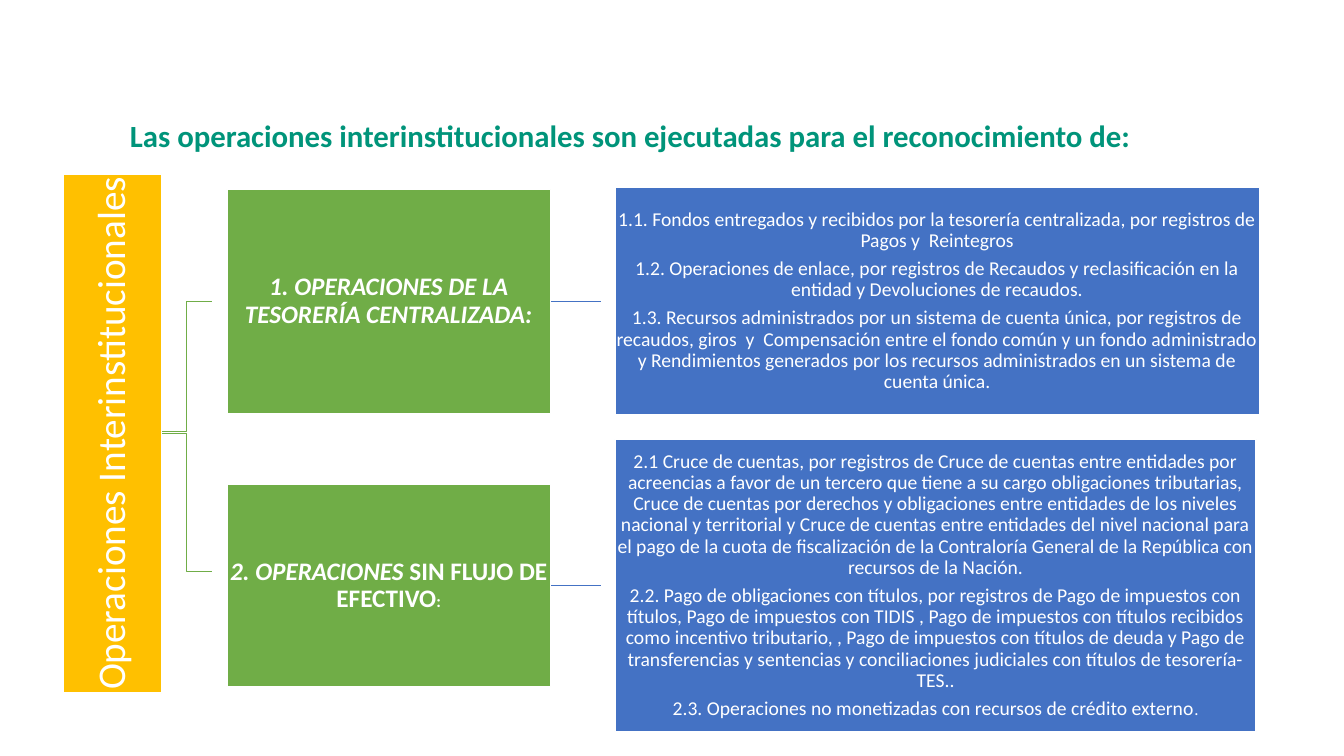
from lxml import etree
from pptx import Presentation
from pptx import util as u
from pptx.dml.color import RGBColor
from pptx.enum import shapes, text
from pptx.oxml.ns import qn

PX = 9144  # EMU per px, 100 px to the inch
COLORS = {
    "white": "FFFFFF",
    "amber": "FFC000",
    "green": "70AD47",
    "blue": "4472C4",
    "teal": "00947A",
}


def rgb(name):
    return RGBColor.from_string(COLORS[name])


def write(frame, paragraphs, size=14, color="white", align=text.PP_ALIGN.CENTER,
          after=0, inset=None, bold=False, italic=False):
    """Fill a frame; a paragraph is a string or a list of (string, overrides)."""
    frame.word_wrap = True
    frame.vertical_anchor = text.MSO_ANCHOR.MIDDLE
    if inset is not None:
        frame.margin_left = frame.margin_right = inset * PX
        frame.margin_top = frame.margin_bottom = inset * PX
    for index, content in enumerate(paragraphs):
        paragraph = frame.add_paragraph() if index else frame.paragraphs[0]
        paragraph.alignment = align
        paragraph.line_spacing = 0.9
        paragraph.space_after = u.Pt(after)
        pieces = [(content, {})] if isinstance(content, str) else content
        for words, changes in pieces:
            run = paragraph.add_run()
            run.text = words
            run.font.name = "Calibri"
            run.font.size = u.Pt(changes.get("size", size))
            run.font.bold = changes.get("bold", bold)
            run.font.italic = changes.get("italic", italic)
            run.font.color.rgb = rgb(color)


class Diagram:
    def __init__(self, slide):
        self.shapes = slide.shapes
        self.line_width = u.Pt(1)

    def heading(self, left, top, width, height, words, **style):
        box = self.shapes.add_textbox(left * PX, top * PX, width * PX, height * PX)
        write(box.text_frame, [words], **style)

    def block(self, left, top, width, height, fill, paragraphs, rotation=0, **style):
        box = self.shapes.add_shape(shapes.MSO_SHAPE.RECTANGLE,
                                    left * PX, top * PX, width * PX, height * PX)
        box.rotation = rotation
        box.shadow.inherit = False
        box.fill.solid()
        box.fill.fore_color.rgb = rgb(fill)
        box.line.color.rgb = rgb("white")
        box.line.width = self.line_width
        write(box.text_frame, paragraphs, **style)

    def branch(self, points, color):
        builder = self.shapes.build_freeform(*points[0], scale=PX)
        builder.add_line_segments(points[1:], close=False)
        elbow = builder.convert_to_shape()
        elbow.shadow.inherit = False
        elbow.fill.background()
        elbow.line.color.rgb = rgb(color)
        elbow.line.width = self.line_width

    def link(self, x1, x2, y, color):
        line = self.shapes.add_connector(shapes.MSO_CONNECTOR.STRAIGHT,
                                         x1 * PX, y * PX, x2 * PX, y * PX)
        line.line.color.rgb = rgb(color)
        line.line.width = self.line_width
        etree.SubElement(line._element.spPr, qn("a:effectLst"))


TREASURY = ["1. OPERACIONES DE LA TESORERÍA CENTRALIZADA:"]
TREASURY_DETAIL = [
    "1.1. Fondos entregados y recibidos por la tesorería centralizada, por registros de "
    "Pagos y  Reintegros",
    "1.2. Operaciones de enlace, por registros de Recaudos y reclasificación en la "
    "entidad y Devoluciones de recaudos.",
    "1.3. Recursos administrados por un sistema de cuenta única, por registros de "
    "recaudos, giros  y  Compensación entre el fondo común y un fondo administrado "
    "y Rendimientos generados por los recursos administrados en un sistema de "
    "cuenta única.",
]
NO_CASH = [[("2. OPERACIONES ", {}),
            ("SIN FLUJO DE EFECTIVO", {"italic": False}),
            (":", {"italic": False, "size": 12})]]
NO_CASH_DETAIL = [
    "2.1 Cruce de cuentas, por registros de Cruce de cuentas entre entidades por "
    "acreencias a favor de un tercero que tiene a su cargo obligaciones tributarias, "
    "Cruce de cuentas por derechos y obligaciones entre entidades de los niveles "
    "nacional y territorial y Cruce de cuentas entre entidades del nivel nacional para "
    "el pago de la cuota de fiscalización de la Contraloría General de la República con "
    "recursos de la Nación.",
    "2.2. Pago de obligaciones con títulos, por registros de Pago de impuestos con "
    "títulos, Pago de impuestos con TIDIS , Pago de impuestos con títulos recibidos "
    "como incentivo tributario, , Pago de impuestos con títulos de deuda y Pago de "
    "transferencias y sentencias y conciliaciones judiciales con títulos de tesorería-TES..",
    [("2.3. Operaciones no monetizadas con recursos de crédito externo", {}),
     (".", {"size": 12})],
]


def main():
    deck = Presentation()
    deck.slide_width, deck.slide_height = 1333 * PX, 750 * PX
    diagram = Diagram(deck.slides.add_slide(deck.slide_layouts[6]))

    # Branches from the root, then links from each group to its detail
    for root_y, group_y in ((430, 567), (428, 299)):
        diagram.branch([(160, root_y), (185, root_y), (185, group_y), (210, group_y)],
                       "green")
    for link_y in (299, 581):
        diagram.link(546, 596, link_y, "blue")

    # Root, turned to read upwards
    diagram.block(-146, 381, 515, 98, "amber", ["Operaciones Interinstitucionales"],
                  rotation=270, size=28, after=10, inset=2)

    # Groups: group top and height, detail top, width and height
    rows = (
        (TREASURY, 188, 222, TREASURY_DETAIL, 186, 639, 225),
        (NO_CASH, 481, 200, NO_CASH_DETAIL, 436, 636, 290),
    )
    for group, top, height, detail, detail_top, detail_width, detail_height in rows:
        diagram.block(225, top, 321, height, "green", group,
                      size=18, after=6, inset=1, bold=True, italic=True)
        diagram.block(610, detail_top, detail_width, detail_height, "blue", detail,
                      size=14, after=5, inset=1)

    # Heading
    diagram.heading(119, 69, 1059, 134,
                    "Las operaciones interinstitucionales son ejecutadas para el "
                    "reconocimiento de:",
                    size=22, color="teal", align=text.PP_ALIGN.LEFT, bold=True)

    deck.save("out.pptx")


if __name__ == "__main__":
    main()
